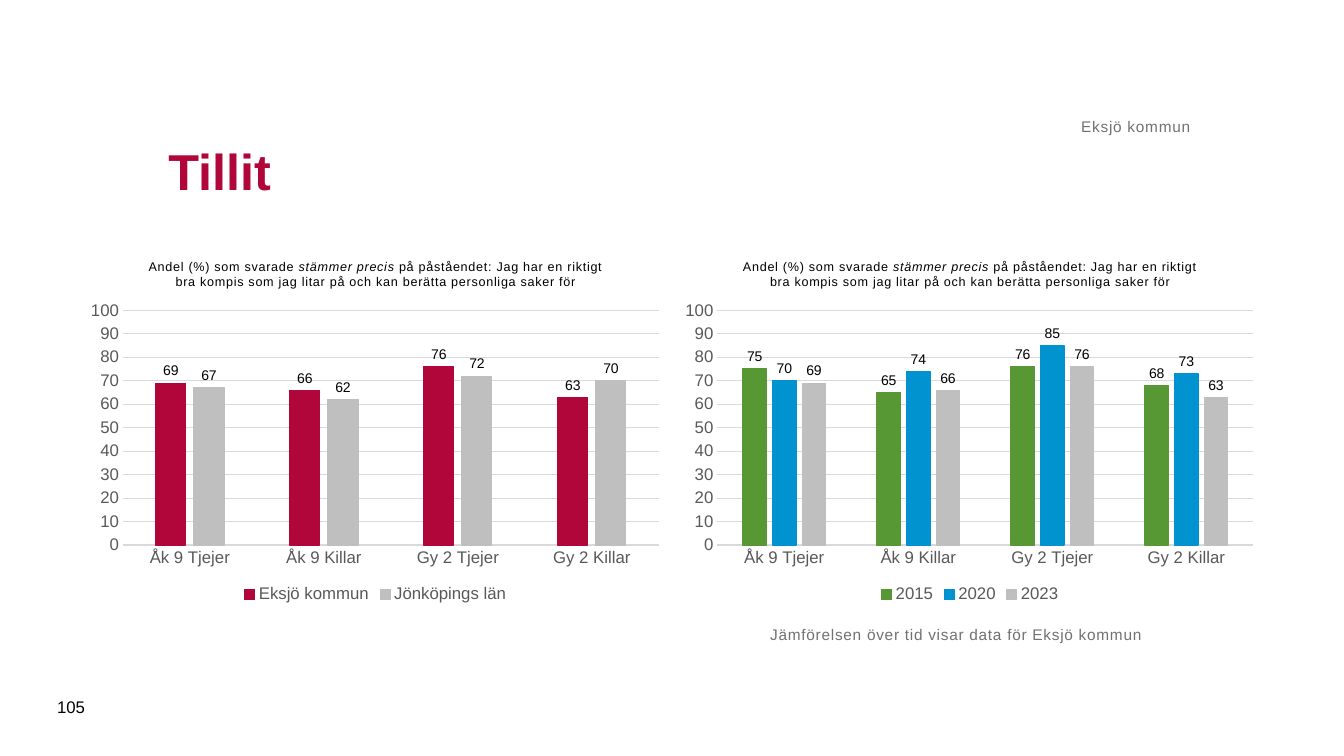
from dataclasses import dataclass
from lxml.etree import SubElement
from pptx import Presentation
from pptx.chart.data import CategoryChartData
from pptx.dml.color import RGBColor
from pptx.enum.chart import XL_CHART_TYPE, XL_LABEL_POSITION, XL_LEGEND_POSITION, XL_TICK_MARK
from pptx.enum.text import MSO_ANCHOR, PP_ALIGN
from pptx.oxml.ns import qn
from pptx.util import Cm, Pt


@dataclass(frozen=True)
class Theme:
    font: str = "Arial"
    red: str = "B1063A"
    green: str = "579835"
    blue: str = "0093D0"
    silver: str = "BFBFBF"
    grid: str = "D9D9D9"
    axis: str = "595959"
    note: str = "717171"
    black: str = "000000"
    head_size: int = 36
    axis_size: int = 12
    note_size: int = 11
    label_size: int = 10
    title_size: int = 9
    hairline: float = 0.75


THEME = Theme()
FORMAT = "#,##0;#,##0"
GROUPS = ("Åk 9 Tjejer", "Åk 9 Killar", "Gy 2 Tjejer", "Gy 2 Killar")
CLAIM = (
    ("Andel (%) som svarade ", False),
    ("stämmer precis", True),
    (" på påståendet: Jag har en riktigt bra kompis som jag litar på "
     "och kan berätta personliga saker för", False),
)
PLACES = (
    ("Eksjö kommun", THEME.red, (69, 66, 76, 63)),
    ("Jönköpings län", THEME.silver, (67, 62, 72, 70)),
)
YEARS = (
    ("2015", THEME.green, (75, 65, 76, 68)),
    ("2020", THEME.blue, (70, 74, 85, 73)),
    ("2023", THEME.silver, (69, 66, 76, 63)),
)


def style(font, size, color, bold=False):
    font.name = THEME.font
    font.size = Pt(size)
    font.bold = bold
    font.color.rgb = RGBColor.from_string(color)


def space(run):
    run._r.get_or_add_rPr().set("spc", "50")


def stroke(line, color):
    line.color.rgb = RGBColor.from_string(color)
    line.width = Pt(THEME.hairline)


def place(shape, left, top, width, height):
    shape.left, shape.top = Cm(left), Cm(top)
    shape.width, shape.height = Cm(width), Cm(height)


def add_head(slide, text):
    head = slide.shapes.title
    place(head, 3.99, 2.49, 26.01, 3.61)
    frame = head.text_frame
    frame.text = text
    frame.vertical_anchor = MSO_ANCHOR.MIDDLE
    frame.paragraphs[0].alignment = PP_ALIGN.LEFT
    style(frame.paragraphs[0].runs[0].font, THEME.head_size, THEME.red, True)


def add_text(slide, text, box, size, color, anchor, align=PP_ALIGN.LEFT):
    frame = slide.shapes.add_textbox(*map(Cm, box)).text_frame
    frame.word_wrap = True
    frame.vertical_anchor = anchor
    frame.text = text
    frame.paragraphs[0].alignment = align
    run = frame.paragraphs[0].runs[0]
    style(run.font, size, color)
    return frame, run


def add_note(slide, text, box, anchor, align=PP_ALIGN.LEFT):
    frame, run = add_text(slide, text, box, THEME.note_size, THEME.note, anchor, align)
    frame.margin_left = frame.margin_right = frame.margin_top = frame.margin_bottom = 0
    space(run)


def set_title(chart):
    line = chart.chart_title.text_frame.paragraphs[0]
    style(line.font, THEME.title_size, THEME.black)
    for text, slant in CLAIM:
        run = line.add_run()
        run.text = text
        style(run.font, THEME.title_size, THEME.black)
        run.font.italic = slant
        space(run)
    chart.chart_title.include_in_layout = False


def set_axes(chart):
    groups, values = chart.category_axis, chart.value_axis
    for axis in (groups, values):
        axis.major_tick_mark = axis.minor_tick_mark = XL_TICK_MARK.NONE
        style(axis.tick_labels.font, THEME.axis_size, THEME.axis)
    stroke(groups.format.line, THEME.grid)
    values.format.line.fill.background()
    values.minimum_scale, values.maximum_scale = 0, 100
    values.major_unit = 10
    values.tick_labels.number_format = FORMAT
    values.tick_labels.number_format_is_linked = False
    stroke(values.major_gridlines.format.line, THEME.grid)


def set_plot_area(chart):
    area = chart._chartSpace.chart.plotArea
    for old in area.findall(qn("c:layout")):
        area.remove(old)
    layout = SubElement(area, qn("c:layout"))
    area.insert(0, layout)
    manual = SubElement(layout, qn("c:manualLayout"))
    rules = (("layoutTarget", "inner"), ("xMode", "edge"), ("yMode", "edge"),
             ("x", "0.073"), ("y", "0.187"), ("w", "0.906"), ("h", "0.643"))
    for name, value in rules:
        SubElement(manual, qn("c:" + name)).set("val", value)


def set_bars(plot, rows):
    plot.gap_width, plot.overlap = 219, -27
    plot.vary_by_categories = False
    for bars, (_, color, _) in zip(plot.series, rows):
        bars.format.fill.solid()
        bars.format.fill.fore_color.rgb = RGBColor.from_string(color)
        stroke(bars.format.line, color)
        labels = bars.data_labels
        labels.show_value = True
        labels.position = XL_LABEL_POSITION.OUTSIDE_END
        labels.number_format = FORMAT
        labels.number_format_is_linked = False
        style(labels.font, THEME.label_size, THEME.black)


def add_bars(slide, left, rows):
    data = CategoryChartData(number_format=FORMAT)
    data.categories = GROUPS
    for name, _, values in rows:
        data.add_series(name, values)
    box = map(Cm, (left, 6.1, 14.91, 9.2))
    chart = slide.shapes.add_chart(XL_CHART_TYPE.COLUMN_CLUSTERED, *box, data).chart
    style(chart.font, THEME.label_size, THEME.black)
    set_title(chart)
    set_axes(chart)
    set_plot_area(chart)
    set_bars(chart.plots[0], rows)
    chart.has_legend = True
    chart.legend.position = XL_LEGEND_POSITION.BOTTOM
    chart.legend.include_in_layout = False
    style(chart.legend.font, THEME.axis_size, THEME.axis)


def main():
    deck = Presentation()
    deck.slide_width, deck.slide_height = Cm(33.87), Cm(19.05)
    slide = deck.slides.add_slide(deck.slide_layouts[5])
    for left, rows in ((2.01, PLACES), (16.99, YEARS)):
        add_bars(slide, left, rows)
    add_head(slide, "Tillit")
    add_note(slide, "Jämförelsen över tid visar data för Eksjö kommun",
             (19.41, 15.75, 13.49, 2.39), MSO_ANCHOR.TOP)
    add_note(slide, "Eksjö kommun", (3.99, 1.57, 26.01, 1.85),
             MSO_ANCHOR.BOTTOM, PP_ALIGN.RIGHT)
    add_text(slide, "105", (1.19, 17.3, 1.45, 1.02),
             THEME.axis_size, THEME.black, MSO_ANCHOR.MIDDLE)
    deck.save("out.pptx")


if __name__ == "__main__":
    main()
